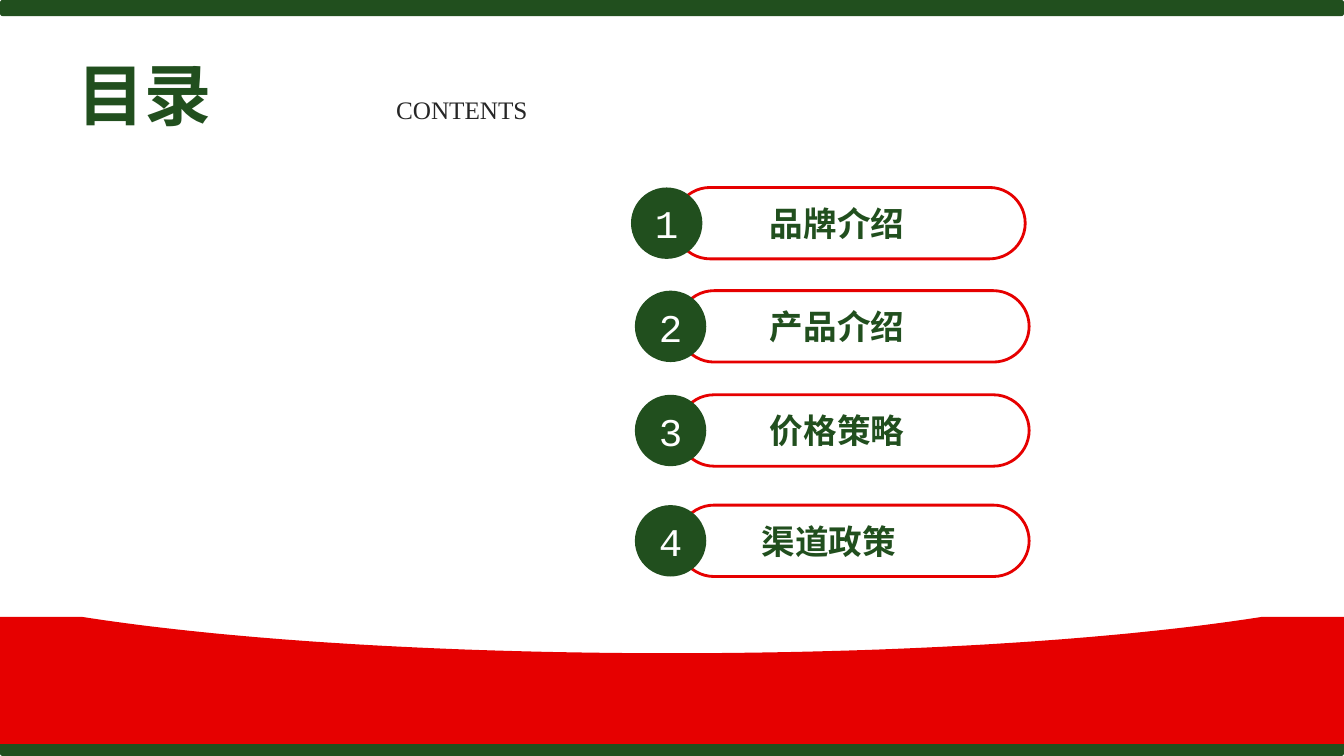
"""Build a contents slide with four numbered sections above a curved red footer."""
from dataclasses import dataclass

from lxml.etree import SubElement
from pptx import Presentation
from pptx.dml.color import RGBColor
from pptx.enum.shapes import MSO_SHAPE as Shape
from pptx.enum.text import MSO_ANCHOR as Anchor, PP_ALIGN as Align
from pptx.oxml.ns import qn
from pptx.util import Pt


@dataclass(frozen=True)
class Theme:
    green: RGBColor = RGBColor(0x21, 0x4F, 0x1E)
    red: RGBColor = RGBColor(0xE6, 0x00, 0x00)
    ink: RGBColor = RGBColor(0x26, 0x26, 0x26)
    white: RGBColor = RGBColor(0xFF, 0xFF, 0xFF)
    chinese: str = "Noto Sans CJK SC"
    serif: str = "Times New Roman"
    mono: str = "Courier New"
    title: int = 48
    number: int = 28
    label: int = 24
    subtitle: int = 18


theme = Theme()
WIDTH, HEIGHT = 960, 540
BAR_HEIGHT = 11.5
CURVE_STEPS = 40
BADGE_SIZE = 51
PILL_OFFSET, PILL_WIDTH = 31, 250.6

presentation = Presentation()
presentation.slide_width, presentation.slide_height = Pt(WIDTH), Pt(HEIGHT)
slide = presentation.slides.add_slide(presentation.slide_layouts[6])


def add_block(kind, left, top, width, height, fill=None, line=None):
    shape = slide.shapes.add_shape(kind, Pt(left), Pt(top), Pt(width), Pt(height))
    shape.shadow.inherit = False
    if fill is None:
        shape.fill.background()
    else:
        shape.fill.solid()
        shape.fill.fore_color.rgb = fill
    if line is None:
        shape.line.fill.background()
    else:
        shape.line.color.rgb = line
        shape.line.width = Pt(2)
    return shape


def write_text(shape, text, *, font, size, color, bold=False, align=Align.LEFT,
               anchor=Anchor.MIDDLE, wrap=False):
    frame = shape.text_frame
    frame.word_wrap = wrap
    frame.vertical_anchor = anchor
    paragraph = frame.paragraphs[0]
    paragraph.alignment = align
    run = paragraph.add_run()
    run.text = text
    run.font.name, run.font.size, run.font.bold = font, Pt(size), bold
    run.font.color.rgb = color
    SubElement(run.font._element, qn("a:ea"), typeface=font)


for bar_top in (HEIGHT - BAR_HEIGHT, 0):
    add_block(Shape.ROUNDED_RECTANGLE, 0, bar_top, WIDTH, BAR_HEIGHT, fill=theme.green)

curve_controls = ((58.3, 440.6), (159, 456.5), (310.3, 466.6), (480, 466.6))
left_curve = []
for step in range(CURVE_STEPS + 1):
    t = step / CURVE_STEPS
    weights = ((1 - t) ** 3, 3 * t * (1 - t) ** 2, 3 * t ** 2 * (1 - t), t ** 3)
    left_curve.append(tuple(
        sum(weight * control[axis] for weight, control in zip(weights, curve_controls))
        for axis in (0, 1)))
right_curve = [(WIDTH - x, y) for x, y in reversed(left_curve[:-1])]
footer_top, footer_bottom = 440.6, 531.4
outline = left_curve + right_curve + [
    (WIDTH, footer_top), (WIDTH, footer_bottom), (0, footer_bottom)]
builder = slide.shapes.build_freeform(0, Pt(footer_top), scale=1)
builder.add_line_segments([(Pt(x), Pt(y)) for x, y in outline], close=True)
footer = builder.convert_to_shape()
footer.shadow.inherit = False
footer.fill.solid()
footer.fill.fore_color.rgb = theme.red
footer.line.fill.background()

title = slide.shapes.add_textbox(Pt(48), Pt(21.6), Pt(864), Pt(90))
write_text(title, "目录", font=theme.chinese, size=theme.title, color=theme.green,
           bold=True, wrap=True)

sections = (
    ("品牌介绍", 450.7, 133.9, 542.9),
    ("产品介绍", 453.5, 207.6, 542.9),
    ("价格策略", 453.5, 282, 542.9),
    ("渠道政策", 453.5, 360.8, 536.9),
)
for number, (name, left, top, label_left) in enumerate(sections, start=1):
    pill = add_block(Shape.ROUNDED_RECTANGLE, left + PILL_OFFSET, top, PILL_WIDTH,
                     BADGE_SIZE, line=theme.red)
    pill.adjustments[0] = 0.5
    badge = add_block(Shape.OVAL, left, top, BADGE_SIZE, BADGE_SIZE, fill=theme.green)
    write_text(badge, str(number), font=theme.mono, size=theme.number,
               color=theme.white, align=Align.CENTER)
    label = slide.shapes.add_textbox(Pt(label_left), Pt(top + 7.4), Pt(114), Pt(36))
    write_text(label, name, font=theme.chinese, size=theme.label, color=theme.green,
               bold=True)

subtitle = slide.shapes.add_textbox(Pt(275.8), Pt(63.6), Pt(108.7), Pt(28.8))
write_text(subtitle, "CONTENTS", font=theme.serif, size=theme.subtitle,
           color=theme.ink, anchor=Anchor.TOP)

presentation.save("out.pptx")
